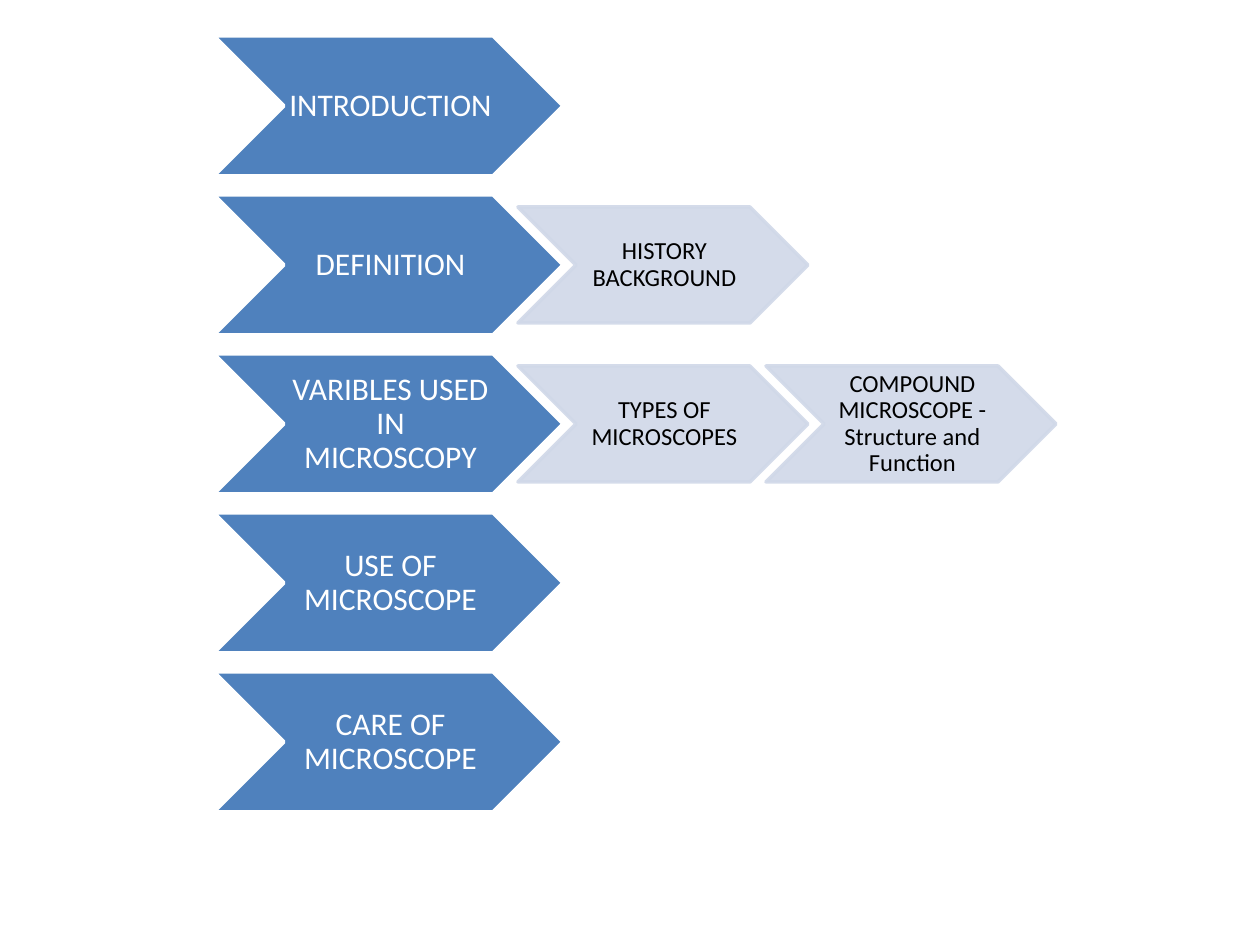
from lxml.etree import SubElement
from pptx import Presentation
from pptx.dml.color import RGBColor
from pptx.enum.shapes import MSO_SHAPE
from pptx.enum.text import MSO_ANCHOR, PP_ALIGN
from pptx.oxml.ns import qn
from pptx.util import Inches, Pt

# Content: each row is a topic followed by its details
ROWS = [
    ["INTRODUCTION"],
    ["DEFINITION", "HISTORY BACKGROUND"],
    ["VARIBLES USED IN MICROSCOPY", "TYPES OF MICROSCOPES",
     "COMPOUND MICROSCOPE - Structure and Function"],
    ["USE OF MICROSCOPE"],
    ["CARE OF MICROSCOPE"],
]

# Styles and layout in pixels
TOPIC = dict(width=349, height=140, fill="4F81BD", line="FFFFFF",
             color="FFFFFF", size=18, opacity=100, inset=4)
DETAIL = dict(width=290, height=116, fill="D0D8E8", line="D0D8E8",
              color="000000", size=14, opacity=90, inset=3)
TOPIC_LEFT, DETAIL_LEFT, DETAIL_STEP = 214, 518, 248
FIRST_MIDDLE, ROW_STEP = 106, 159


def px(pixels):
    return round(pixels * Inches(1) / 126)


def paint(color_format, value):
    color_format.rgb = RGBColor.from_string(value)


def add_chevron(slide, text, left, middle, style):
    chevron = slide.shapes.add_shape(
        MSO_SHAPE.CHEVRON, px(left), px(middle - style["height"] / 2),
        px(style["width"]), px(style["height"]))
    chevron.shadow.inherit = False
    chevron.fill.solid()
    paint(chevron.fill.fore_color, style["fill"])
    paint(chevron.line.color, style["line"])
    chevron.line.width = Pt(2)
    if style["opacity"] < 100:
        for color in chevron.element.spPr.iter(qn("a:srgbClr")):
            SubElement(color, qn("a:alpha"), val=str(style["opacity"] * 1000))

    frame = chevron.text_frame
    frame.text = text
    frame.word_wrap = True
    frame.vertical_anchor = MSO_ANCHOR.MIDDLE
    frame.margin_left, frame.margin_right = px(style["inset"]), 0
    frame.margin_top = frame.margin_bottom = px(1)
    para = frame.paragraphs[0]
    para.alignment = PP_ALIGN.CENTER
    para.line_spacing = 0.9
    font = para.runs[0].font
    font.name, font.size = "Calibri", Pt(style["size"])
    paint(font.color, style["color"])


# Slide
deck = Presentation()
deck.slide_width, deck.slide_height = Inches(10), Inches(7.5)
slide = deck.slides.add_slide(deck.slide_layouts[6])

# Rows of chevrons
for row, (topic, *details) in enumerate(ROWS):
    middle = FIRST_MIDDLE + row * ROW_STEP
    add_chevron(slide, topic, TOPIC_LEFT, middle, TOPIC)
    for column, detail in enumerate(details):
        add_chevron(slide, detail, DETAIL_LEFT + column * DETAIL_STEP, middle, DETAIL)

deck.save("out.pptx")
